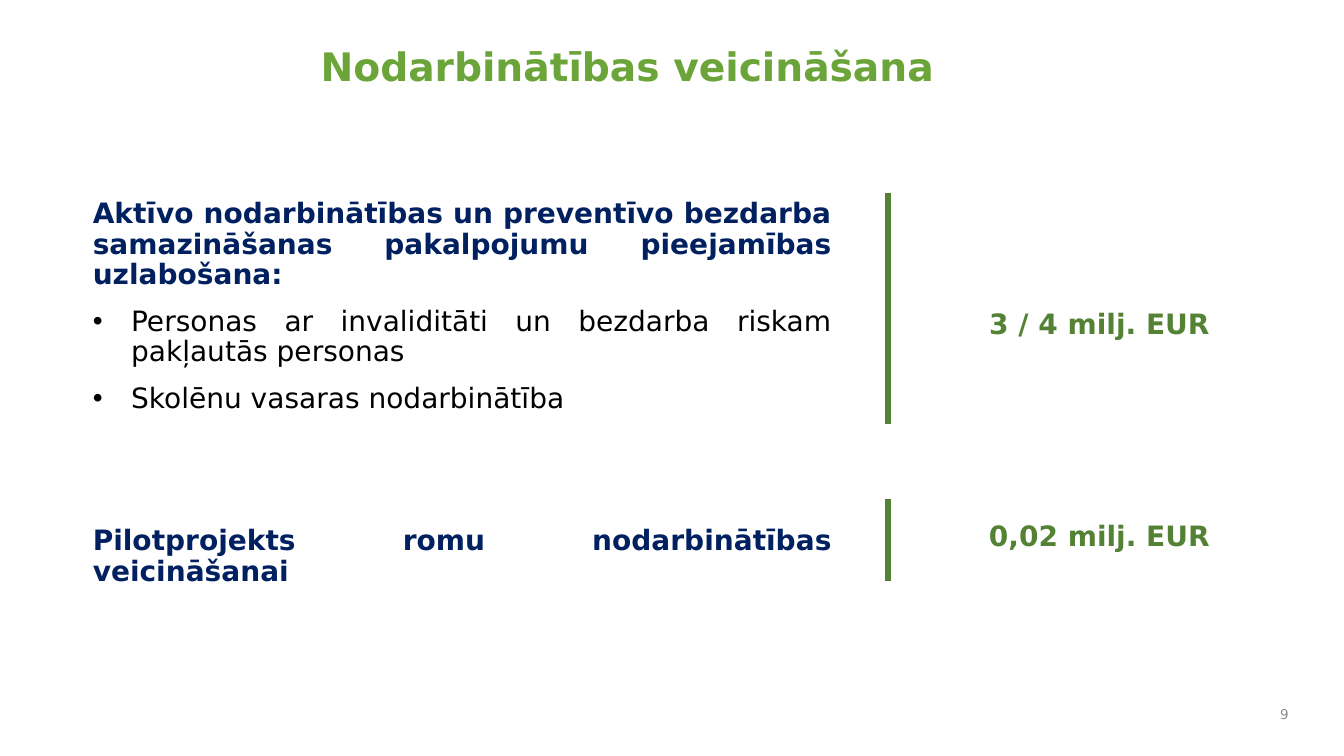
from lxml import etree
from pptx import Presentation
from pptx import util as u
from pptx.dml.color import RGBColor
from pptx.enum import shapes, text
from pptx.oxml.ns import qn

TITLE_GREEN = RGBColor(0x6B, 0xA5, 0x39)
GREEN = RGBColor(0x54, 0x82, 0x35)
NAVY = RGBColor(0x00, 0x20, 0x60)
BLACK = RGBColor(0x00, 0x00, 0x00)
GREY = RGBColor(0x8C, 0x8C, 0x8C)
FONT = "DejaVu Sans"
ALIGN = text.PP_ALIGN
ANCHOR = text.MSO_ANCHOR


class FundingSlide:
    """Holds the text style and the current page."""

    def __init__(self, deck):
        self.page = deck.slides.add_slide(deck.slide_layouts[1])

    def place(self, box, left, top, width, height, anchor=ANCHOR.TOP):
        box.left, box.top = u.Inches(left), u.Inches(top)
        box.width, box.height = u.Inches(width), u.Inches(height)
        frame = box.text_frame
        frame.word_wrap = True
        frame.auto_size = text.MSO_AUTO_SIZE.NONE
        frame.vertical_anchor = anchor
        return frame

    def add_words(self, para, words, size, color, bold=False, align=ALIGN.LEFT,
                  before=0, spacing=0.9):
        para.alignment = align
        para.line_spacing = spacing
        para.space_before = u.Pt(before)
        para.space_after = u.Pt(0)
        span = para.add_run()
        span.text = words
        span.font.name = FONT
        span.font.size = u.Pt(size)
        span.font.bold = bold
        span.font.color.rgb = color

    def title(self, words, *place):
        frame = self.place(self.page.shapes.title, *place)
        self.add_words(frame.paragraphs[0], words, 28, TITLE_GREEN, True)

    def body(self, items, *place):
        frame = self.place(self.page.placeholders[1], *place)
        for index, (words, bulleted, before) in enumerate(items):
            para = frame.add_paragraph() if index else frame.paragraphs[0]
            self.bullet(para, bulleted)
            self.add_words(para, words, 20, BLACK if bulleted else NAVY,
                           not bulleted, ALIGN.JUSTIFY, before)

    def bullet(self, para, shown):
        indent = u.Inches(0.38) if shown else 0
        props = para._p.get_or_add_pPr()
        props.set("marL", str(indent))
        props.set("indent", str(-indent))
        if shown:
            etree.SubElement(props, qn("a:buFont"), typeface="Arial")
            etree.SubElement(props, qn("a:buChar"), char="•")
        else:
            etree.SubElement(props, qn("a:buNone"))

    def label(self, words, place, size, color, bold, align, anchor=ANCHOR.TOP,
              spacing=0.9):
        box = self.page.shapes.add_textbox(0, 0, 0, 0)
        frame = self.place(box, *place, anchor)
        self.add_words(frame.paragraphs[0], words, size, color, bold, align,
                       spacing=spacing)

    def divider(self, x, top, bottom):
        line = self.page.shapes.add_connector(
            shapes.MSO_CONNECTOR.STRAIGHT,
            u.Inches(x), u.Inches(top), u.Inches(x), u.Inches(bottom))
        line.line.color.rgb = GREEN
        line.line.width = u.Pt(4.5)
        etree.SubElement(line._element.spPr, qn("a:effectLst"))


def main():
    deck = Presentation()
    deck.slide_width, deck.slide_height = u.Inches(13.33), u.Inches(7.5)
    slide = FundingSlide(deck)

    # Title and measures
    slide.title("Nodarbinātības veicināšana", 3.08, 0.42, 9.92, 1.13)
    slide.body([
        ("Aktīvo nodarbinātības un preventīvo bezdarba samazināšanas "
         "pakalpojumu pieejamības uzlabošana:", False, 0),
        ("Personas ar invaliditāti un bezdarba riskam pakļautās personas",
         True, 12),
        ("Skolēnu vasaras nodarbinātība", True, 12),
        ("Pilotprojekts romu nodarbinātības veicināšanai", False, 80),
    ], 0.82, 1.93, 7.53, 5.32)

    # Funding for each measure, beside its divider
    for amount, amount_top, line_top, line_bottom in [
            ("3 / 4 milj. EUR", 3.03, 1.91, 4.21),
            ("0,02 milj. EUR", 5.13, 4.95, 5.76)]:
        slide.divider(8.81, line_top, line_bottom)
        slide.label(amount, (8.97, amount_top, 3.87, 0.96), 20, GREEN, True,
                    ALIGN.CENTER)

    # Page number
    slide.label("9", (12.44, 6.92, 0.44, 0.33), 9.6, GREY, False, ALIGN.RIGHT,
                ANCHOR.MIDDLE, 1.0)

    deck.save("out.pptx")


if __name__ == "__main__":
    main()
